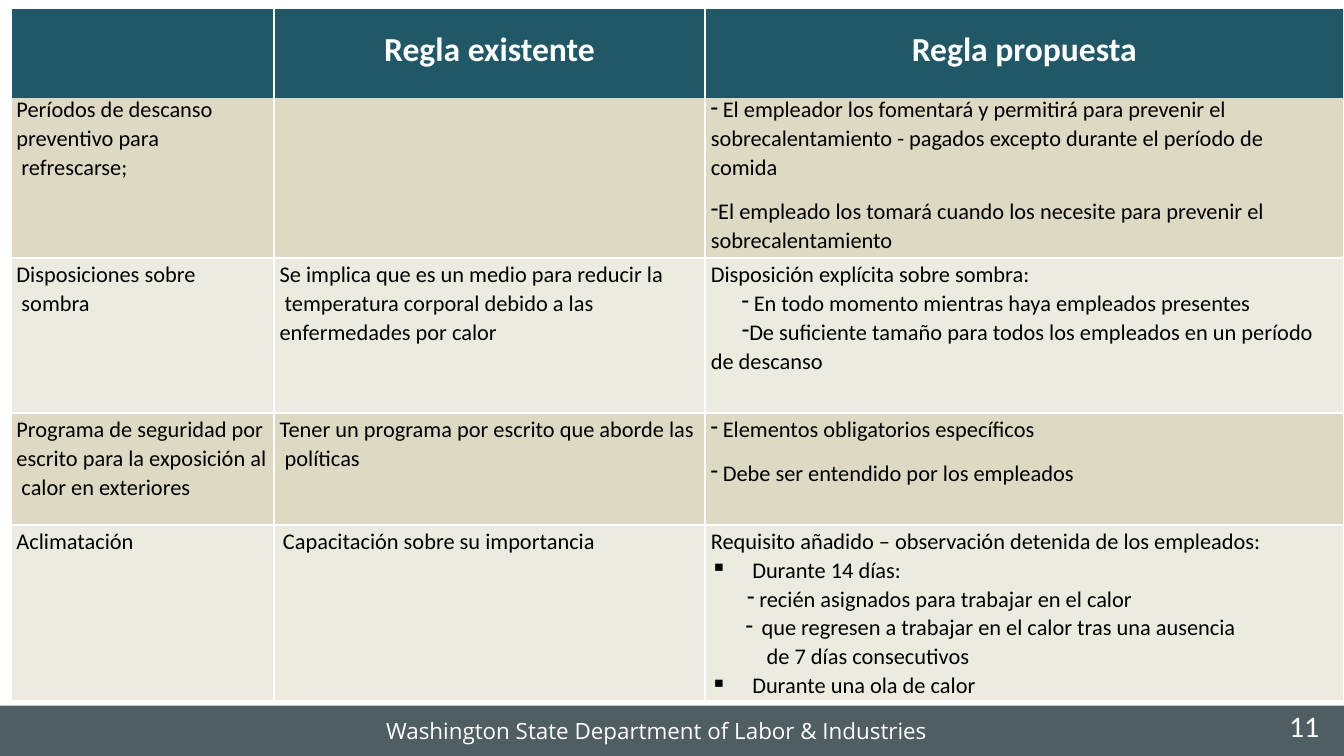
from lxml.etree import SubElement as Sub
from pptx import Presentation
from pptx.dml.color import RGBColor as Rgb
from pptx.enum.shapes import MSO_SHAPE as Shape
from pptx.enum.text import PP_ALIGN as Align
from pptx.oxml.ns import qn
from pptx.util import Pt


def tint(code):
    return Rgb.from_string(code)


def put(frame, paras, **base):
    """Write (text, format) pairs into a text frame."""
    look = dict(size=12, name="Calibri", bold=False, color="000000",
                left=3, indent=0, bullet=None, align=Align.LEFT,
                line=15.5, before=0)
    for n, (text, fmt) in enumerate(paras):
        val = {**look, **base, **fmt}
        para = frame.paragraphs[0] if n == 0 else frame.add_paragraph()
        para.text = text
        para.alignment = val["align"]
        para.line_spacing = Pt(val["line"])
        para.space_before = Pt(val["before"])
        prop = para._p.get_or_add_pPr()
        for key, name in (("marL", "left"), ("indent", "indent")):
            prop.set(key, str(Pt(val[name])))
        if val["bullet"]:
            Sub(prop, qn("a:buChar"), char=val["bullet"])
        for run in para.runs:
            run.font.size = Pt(val["size"])
            for key in ("name", "bold"):
                setattr(run.font, key, val[key])
            run.font.color.rgb = tint(val["color"])


deck = Presentation()
deck.slide_width, deck.slide_height = Pt(720), Pt(405)
slide = deck.slides.add_slide(deck.slide_layouts[6])

# Footer band
band = slide.shapes.add_shape(Shape.RECTANGLE, 0, Pt(378), Pt(720), Pt(27))
band.shadow.inherit = False
band.fill.solid()
band.fill.fore_color.rgb = tint("4F5E63")
band.line.fill.background()

# Paragraph formats
plain = {}
first = dict(line=13.9)
dash = dict(left=9.4, indent=-6.5, bullet="-")
deep = dict(left=26, indent=-6.5, bullet="-")
sub = dict(left=29, indent=-6.5, bullet="-")
square = dict(left=25.2, indent=-22.3, bullet="▪")
head = dict(size=18, bold=True, color="FFFFFF", left=0, line=22,
            before=11.6, align=Align.CENTER)

# Table text, row by row
rows = [
    [[], [("Regla existente", head)], [("Regla propuesta", head)]],
    [
        [("Períodos de descanso", first),
         ("preventivo para\n refrescarse;", plain)],
        [],
        [("El empleador los fomentará y permitirá para prevenir el",
          {**dash, **first}),
         ("sobrecalentamiento - pagados excepto durante el período de\n"
          "comida", plain),
         ("El empleado los tomará cuando los necesite para prevenir el\n"
          "sobrecalentamiento", dict(bullet="-", before=8))],
    ],
    [
        [("Disposiciones sobre\n sombra", plain)],
        [("Se implica que es un medio para reducir la\n"
          " temperatura corporal debido a las\n"
          "enfermedades por calor", plain)],
        [("Disposición explícita sobre sombra:", plain),
         ("En todo momento mientras haya empleados presentes", deep),
         ("De suficiente tamaño para todos los empleados en un período\n"
          "de descanso", dict(indent=16.6, bullet="-"))],
    ],
    [
        [("Programa de seguridad por\nescrito para la exposición al\n"
          " calor en exteriores", plain)],
        [("Tener un programa por escrito que aborde las\n políticas",
          plain)],
        [("Elementos obligatorios específicos", dash),
         ("Debe ser entendido por los empleados", {**dash, "before": 8})],
    ],
    [
        [("Aclimatación", plain)],
        [("Capacitación sobre su importancia", dict(left=4.8))],
        [("Requisito añadido – observación detenida de los empleados:",
          plain),
         ("Durante 14 días:", square),
         ("recién asignados para trabajar en el calor", sub),
         ("que regresen a trabajar en el calor tras una ausencia\n"
          " de 7 días consecutivos", dict(sub, left=30.2, indent=-8.6)),
         ("Durante una ola de calor", square)],
    ],
]
wide = [141, 231, 342]
high = [48, 86, 83, 60, 94]
fills = ["205868", "DDD9C3", "EDEBE0", "DDD9C3", "EDEBE0"]

# Comparison table
table = slide.shapes.add_table(
    len(high), len(wide), Pt(5.8), Pt(4.3), Pt(sum(wide)), Pt(sum(high))).table
table.first_row = table.horz_banding = False
for col, width in zip(table.columns, wide):
    col.width = Pt(width)
for r, (row, height) in enumerate(zip(rows, high)):
    table.rows[r].height = Pt(height)
    for c, paras in enumerate(row):
        cell = table.cell(r, c)
        for side in ("left", "right", "top", "bottom"):
            setattr(cell, "margin_" + side, 0)
        cell.margin_top = Pt(0.7 if r > 1 else 0)
        # White borders, none between the header and the first row
        prop = cell._tc.get_or_add_tcPr()
        for side in "LRTB":
            edge = Sub(prop, qn("a:ln" + side), w=str(Pt(1)))
            if (r, side) in ((0, "B"), (1, "T")):
                Sub(edge, qn("a:noFill"))
            else:
                Sub(Sub(edge, qn("a:solidFill")), qn("a:srgbClr"), val="FFFFFF")
        cell.fill.solid()
        cell.fill.fore_color.rgb = tint(fills[r])
        put(cell.text_frame, paras)
    if r == 0:
        for cell in table.rows[0].cells:
            cell.margin_top = Pt(11.5)

# Footer text and page number
notes = [
    ("Washington State Department of Labor & Industries",
     (206, 381.6, 302, 16), dict(name="Open Sans", left=0.9, line=17)),
    ("11", (687.6, 382.3, 22.5, 18), dict(size=16, line=16.1)),
]
for text, place, fmt in notes:
    frame = slide.shapes.add_textbox(*map(Pt, place)).text_frame
    frame.word_wrap = True
    for side in ("left", "right", "top", "bottom"):
        setattr(frame, "margin_" + side, 0)
    put(frame, [(text, fmt)], color="FFFFFF")

deck.save("out.pptx")
